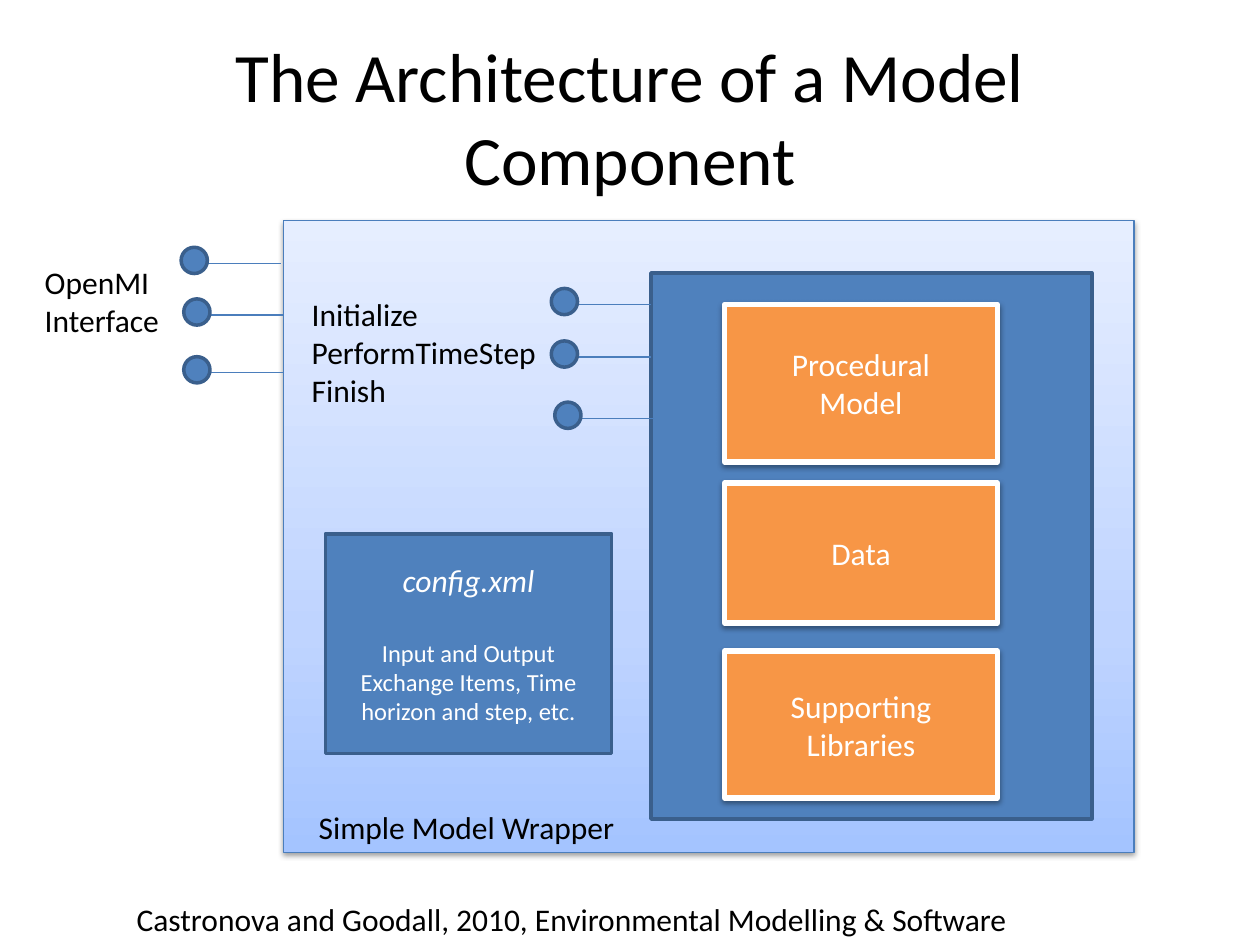
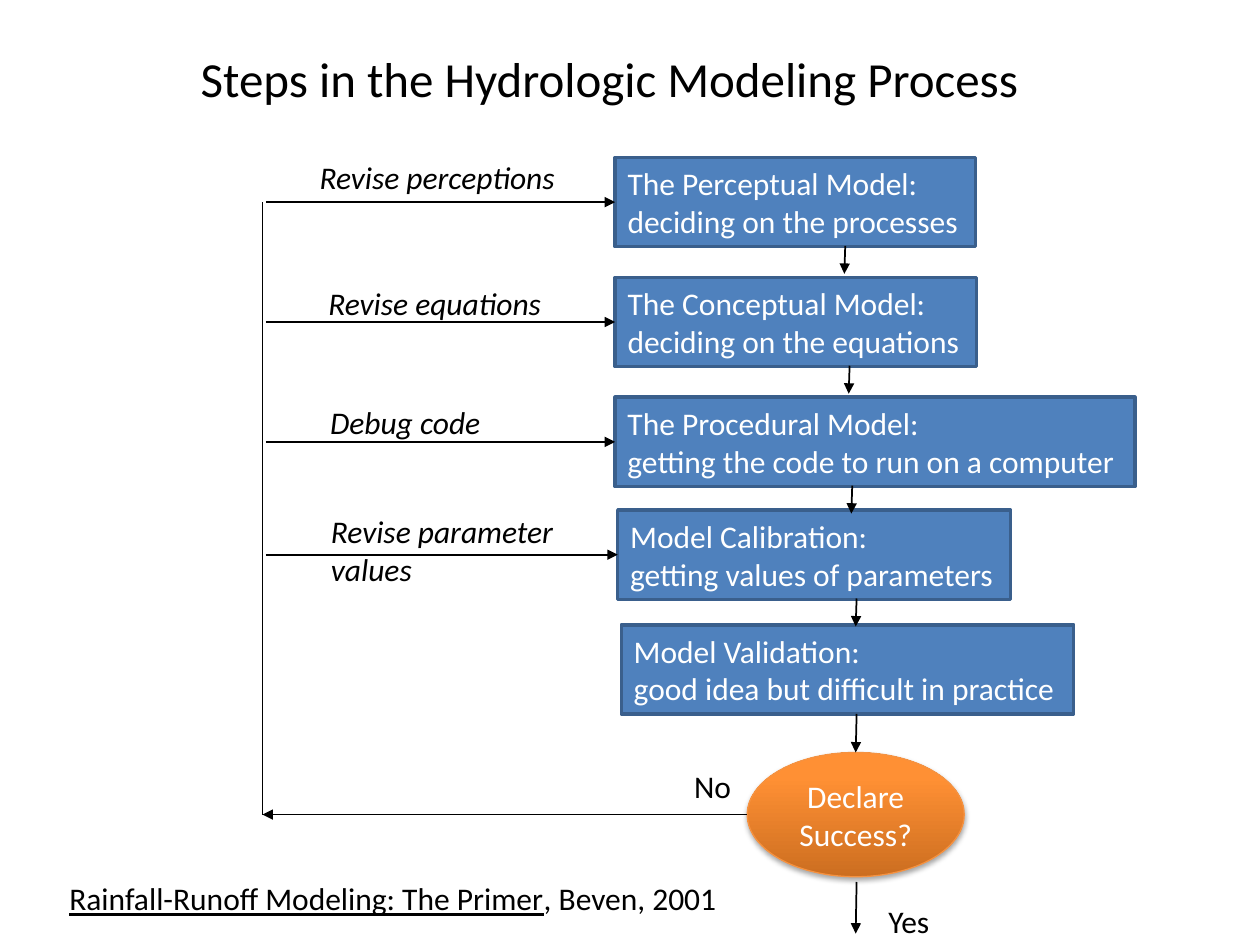
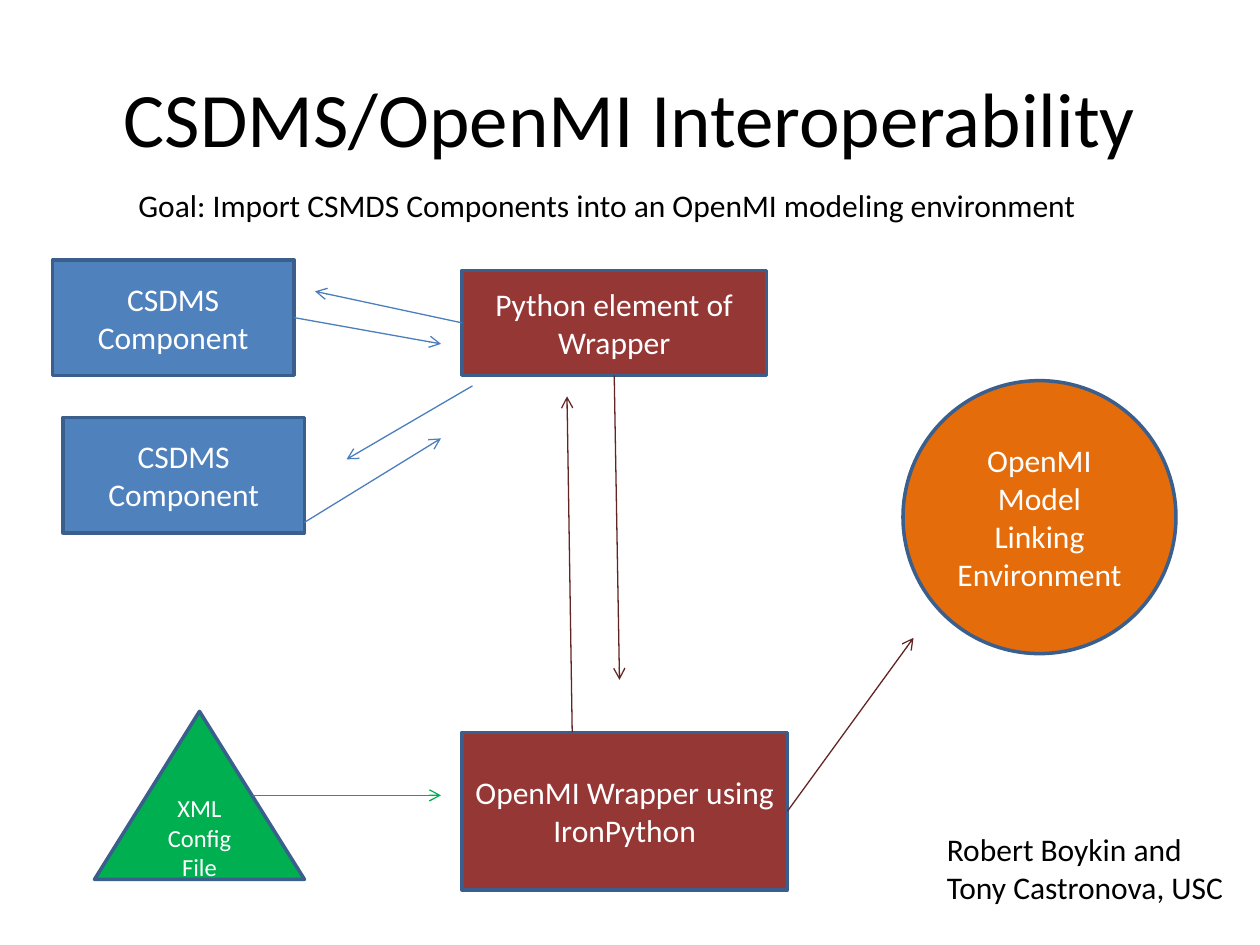
from lxml.etree import SubElement
from pptx import Presentation
from pptx.dml.color import RGBColor
from pptx.enum.shapes import MSO_CONNECTOR, MSO_SHAPE
from pptx.enum.text import MSO_ANCHOR, MSO_AUTO_SIZE, PP_ALIGN
from pptx.oxml.ns import qn
from pptx.util import Pt

FONT = "Calibri"
BLACK = RGBColor(0x00, 0x00, 0x00)
WHITE = RGBColor(0xFF, 0xFF, 0xFF)
BLUE = RGBColor(0x4F, 0x81, 0xBD)
BLUE_EDGE = RGBColor(0x3A, 0x5F, 0x8C)
BLUE_LINE = RGBColor(0x4B, 0x7E, 0xBC)
ORANGE = RGBColor(0xF7, 0x96, 0x46)
ORANGE_EDGE = RGBColor(0xF6, 0x92, 0x40)
DEEP_ORANGE = RGBColor(0xE4, 0x6C, 0x0A)
RED = RGBColor(0x95, 0x37, 0x35)
DARK_RED = RGBColor(0x63, 0x25, 0x23)
GREEN = RGBColor(0x00, 0xB0, 0x50)

# Gradient stops run from bottom to top: (percent, colour)
PALE_BLUES = [(0, RGBColor(0xA4, 0xC4, 0xFF)), (35, RGBColor(0xBF, 0xD4, 0xFF)),
              (100, RGBColor(0xE6, 0xEE, 0xFF))]
ORANGES = [(0, RGBColor(0xCC, 0x6E, 0x20)), (80, RGBColor(0xFF, 0x90, 0x34)),
           (100, RGBColor(0xFF, 0x91, 0x36))]


def points(values):
    return [Pt(value) for value in values]


def write(frame, text, size, color, align=PP_ALIGN.LEFT, italic=False):
    frame.text = text
    for paragraph in frame.paragraphs:
        paragraph.alignment = align
        for run in paragraph.runs:
            run.font.name = FONT
            run.font.size = Pt(size)
            run.font.color.rgb = color
            run.font.italic = italic


def fit_to_text(frame):
    frame.word_wrap = False
    frame.auto_size = MSO_AUTO_SIZE.SHAPE_TO_FIT_TEXT


def add_title(slide, text, size, place=(36, 21.6, 648, 90), anchor=MSO_ANCHOR.MIDDLE):
    title = slide.shapes.title
    title.left, title.top, title.width, title.height = points(place)
    frame = title.text_frame
    frame.word_wrap = True
    frame.auto_size = MSO_AUTO_SIZE.NONE
    frame.vertical_anchor = anchor
    write(frame, text, size, BLACK, PP_ALIGN.CENTER)


def add_label(slide, text, place, italic=False):
    label = slide.shapes.add_textbox(*points(place))
    fit_to_text(label.text_frame)
    write(label.text_frame, text, 18, BLACK, italic=italic)
    return label


def add_block(slide, place, fill, text="", kind=MSO_SHAPE.RECTANGLE, edge=BLUE_EDGE,
              edge_width=2, size=18):
    block = slide.shapes.add_shape(kind, *points(place))
    block.shadow.inherit = False
    block.fill.solid()
    block.fill.fore_color.rgb = fill
    block.line.color.rgb = edge
    block.line.width = Pt(edge_width)
    frame = block.text_frame
    frame.word_wrap = True
    frame.vertical_anchor = MSO_ANCHOR.MIDDLE
    if text:
        write(frame, text, size, WHITE, PP_ALIGN.CENTER)
    return block


def add_shadow(block, opacity):
    effects = block._element.spPr.find(qn("a:effectLst"))
    shadow = SubElement(effects, qn("a:outerShdw"), blurRad=str(Pt(3.1)),
                        dist=str(Pt(1.6)), dir="5400000", rotWithShape="0")
    color = SubElement(shadow, qn("a:srgbClr"), val=str(BLACK))
    SubElement(color, qn("a:alpha"), val=str(opacity * 1000))


def shade(block, stops):
    """Fill the block with a gradient rising from its bottom edge."""
    block.fill.gradient()
    block.fill.gradient_angle = 90
    stop_list = block._element.spPr.find(qn("a:gradFill")).find(qn("a:gsLst"))
    for old_stop in list(stop_list):
        stop_list.remove(old_stop)
    for percent, color in stops:
        stop = SubElement(stop_list, qn("a:gs"), pos=str(percent * 1000))
        SubElement(stop, qn("a:srgbClr"), val=str(color))


def add_line(slide, start, end, color, width=0.75, head=None):
    line = slide.shapes.add_connector(MSO_CONNECTOR.STRAIGHT, *points(start + end))
    line.line.color.rgb = color
    line.line.width = Pt(width)
    properties = line._element.spPr
    if head:
        SubElement(properties.find(qn("a:ln")), qn("a:tailEnd"), type=head)
    SubElement(properties, qn("a:effectLst"))
    return line


def add_port(slide, right, y):
    """Draw an interface port: a circle on a stem that ends at (right, y)."""
    add_line(slide, (right, y), (right - 54, y), BLUE_LINE)
    add_block(slide, (right - 57, y - 9.2, 15, 15), BLUE, kind=MSO_SHAPE.OVAL)


def build_architecture(slide):
    wrapper = add_block(slide, (162, 126, 486, 361), BLUE, edge=BLUE_LINE, edge_width=0.75)
    shade(wrapper, PALE_BLUES)
    add_shadow(wrapper, 38)
    add_title(slide, "The Architecture of a Model Component", 39.6)
    add_block(slide, (372, 156, 252, 312), BLUE)

    for text, top, height in [("Procedural\nModel", 174, 90), ("Data", 276, 80),
                              ("Supporting Libraries", 372, 84)]:
        part = add_block(slide, (414, top, 156, height), ORANGE, text,
                         edge=WHITE, edge_width=3)
        add_shadow(part, 38)

    for right, y in [(372, 174), (372, 204), (374, 239),
                     (160.5, 150.5), (162, 180), (162, 213)]:
        add_port(slide, right, y)

    config = add_block(slide, (186, 305, 163.5, 125.5), BLUE,
                       "config.xml\nInput and Output Exchange Items, Time horizon and step, etc.",
                       size=14)
    file_name, contents = config.text_frame.paragraphs
    file_name.runs[0].font.size = Pt(18)
    file_name.runs[0].font.italic = True
    contents.space_before = Pt(22)

    add_label(slide, "Initialize\nPerformTimeStep\nFinish", (171, 165, 144, 72.5))
    add_label(slide, "OpenMI\nInterface", (18.5, 147, 80.5, 51))
    add_label(slide, "Simple Model Wrapper", (175, 458, 186, 29))
    add_label(slide, "Castronova and Goodall, 2010, Environmental Modelling & Software",
              (71, 511, 518.5, 29))


def build_process(slide):
    add_title(slide, "Steps in the Hydrologic Modeling Process", 28,
              (48, 24, 600.5, 41), MSO_ANCHOR.TOP)
    step_height = 51
    return_x = 150
    black_arrow = {"color": BLACK, "width": 1, "head": "triangle"}

    # text, left, top, width, x of the arrow down to the next step
    steps = [
        ("The Perceptual Model:\ndeciding on the processes", 351.5, 90, 206, 483),
        ("The Conceptual Model:\ndeciding on the equations", 351.5, 158.5, 206.5, 485.5),
        ("The Procedural Model:\ngetting the code to run on a computer", 351.5, 227, 297, 487),
        ("Model Calibration:\ngetting values of parameters", 353, 291.5, 224.5, 489.5),
        ("Model Validation:\ngood idea but difficult in practice", 355, 357, 258.5, 489.5),
    ]
    boxes = []
    for text, left, top, width, _ in steps:
        box = add_block(slide, (left, top, width, step_height), BLUE)
        fit_to_text(box.text_frame)
        write(box.text_frame, text, 18, WHITE)
        boxes.append(box)

    decision = add_block(slide, (427, 430, 124, 71), DEEP_ORANGE, "Declare\nSuccess?",
                         MSO_SHAPE.OVAL, ORANGE_EDGE, 0.75)
    shade(decision, ORANGES)
    add_shadow(decision, 35)

    middles = [top + step_height / 2 for _, _, top, _, _ in steps]
    for box, step, middle in zip(boxes[:4], steps, middles):
        feedback = add_line(slide, (152, middle), (step[1], middle), **black_arrow)
        feedback.end_connect(box, 1)
    rejected = add_line(slide, (427, 465.5), (return_x, 465.5), **black_arrow)
    rejected.begin_connect(decision, 1)
    add_line(slide, (return_x, 465.5), (return_x, middles[0]), BLACK, 1)

    for _, _, top, _, x in steps[:4]:
        bottom = top + step_height
        add_line(slide, (x, bottom - 0.5), (x - 0.5, bottom + 15.5), **black_arrow)
    to_decision = add_line(slide, (489.5, 408), (489, 430), **black_arrow)
    to_decision.end_connect(decision, 0)
    add_line(slide, (489.5, 504), (489, 533.5), **black_arrow)

    for text, place in [("Revise perceptions", (175.5, 86.5, 150.5, 29)),
                        ("Revise equations", (180.5, 158.5, 137.5, 29)),
                        ("Debug code", (181.5, 227, 101.5, 29)),
                        ("Revise parameter\nvalues", (182, 289, 142.5, 51))]:
        add_label(slide, text, place, italic=True)
    add_label(slide, "No", (389.5, 435, 37.5, 29))
    add_label(slide, "Yes", (500.5, 512, 40.5, 29))

    book = "Rainfall-Runoff Modeling: The Primer"
    source = add_label(slide, book, (32.5, 499, 387.5, 29))
    citation = source.text_frame.paragraphs[0]
    citation.runs[0].font.underline = True
    author = citation.add_run()
    author.text = ", Beven, 2001"
    author.font.name = FONT
    author.font.size = Pt(18)
    author.font.color.rgb = BLACK


def build_interoperability(slide):
    add_title(slide, "CSDMS/OpenMI Interoperability", 44)
    first_component, second_component = [
        add_block(slide, (left, top, 138, 66), BLUE, "CSDMS Component")
        for left, top in [(30, 148.5), (36, 238.5)]]
    wrapper = add_block(slide, (264, 418.5, 186, 90), RED, "OpenMI Wrapper using IronPython")
    python_part = add_block(slide, (264, 154.5, 174, 60), RED, "Python element of Wrapper")
    add_block(slide, (516, 217.5, 156, 156), DEEP_ORANGE, "OpenMI Model Linking Environment",
              MSO_SHAPE.OVAL)
    add_block(slide, (54, 406.5, 120, 96), GREEN, "XML Config File",
              MSO_SHAPE.ISOSCELES_TRIANGLE, size=14)

    # start, end, colour, block and side that the start is joined to
    for start, end, color, block, side in [
            ((264, 184.5), (180, 166.5), BLUE_LINE, python_part, 1),
            ((168, 181.5), (252, 196.5), BLUE_LINE, first_component, 3),
            ((174, 298.5), (252, 250.5), BLUE_LINE, None, None),
            ((270, 220.5), (198, 262.5), BLUE_LINE, None, None),
            ((450, 463.5), (522, 364.5), DARK_RED, wrapper, 3),
            ((351, 214.5), (354, 388.5), DARK_RED, python_part, 2),
            ((327, 418.5), (324, 226.5), DARK_RED, None, None),
            ((144, 454.5), (252, 454.5), GREEN, None, None)]:
        arrow = add_line(slide, start, end, color, head="arrow")
        if block:
            arrow.begin_connect(block, side)

    add_label(slide, "Robert Boykin and\nTony Castronova, USC", (534, 471, 174.5, 51))
    add_label(slide, "Goal: Import CSMDS Components into an OpenMI modeling environment",
              (72, 102.5, 556.5, 29))


def main():
    deck = Presentation()
    deck.slide_width, deck.slide_height = Pt(720), Pt(540)
    title_only = deck.slide_layouts[5]
    for build in (build_architecture, build_process, build_interoperability):
        build(deck.slides.add_slide(title_only))
    deck.save("out.pptx")


if __name__ == "__main__":
    main()
